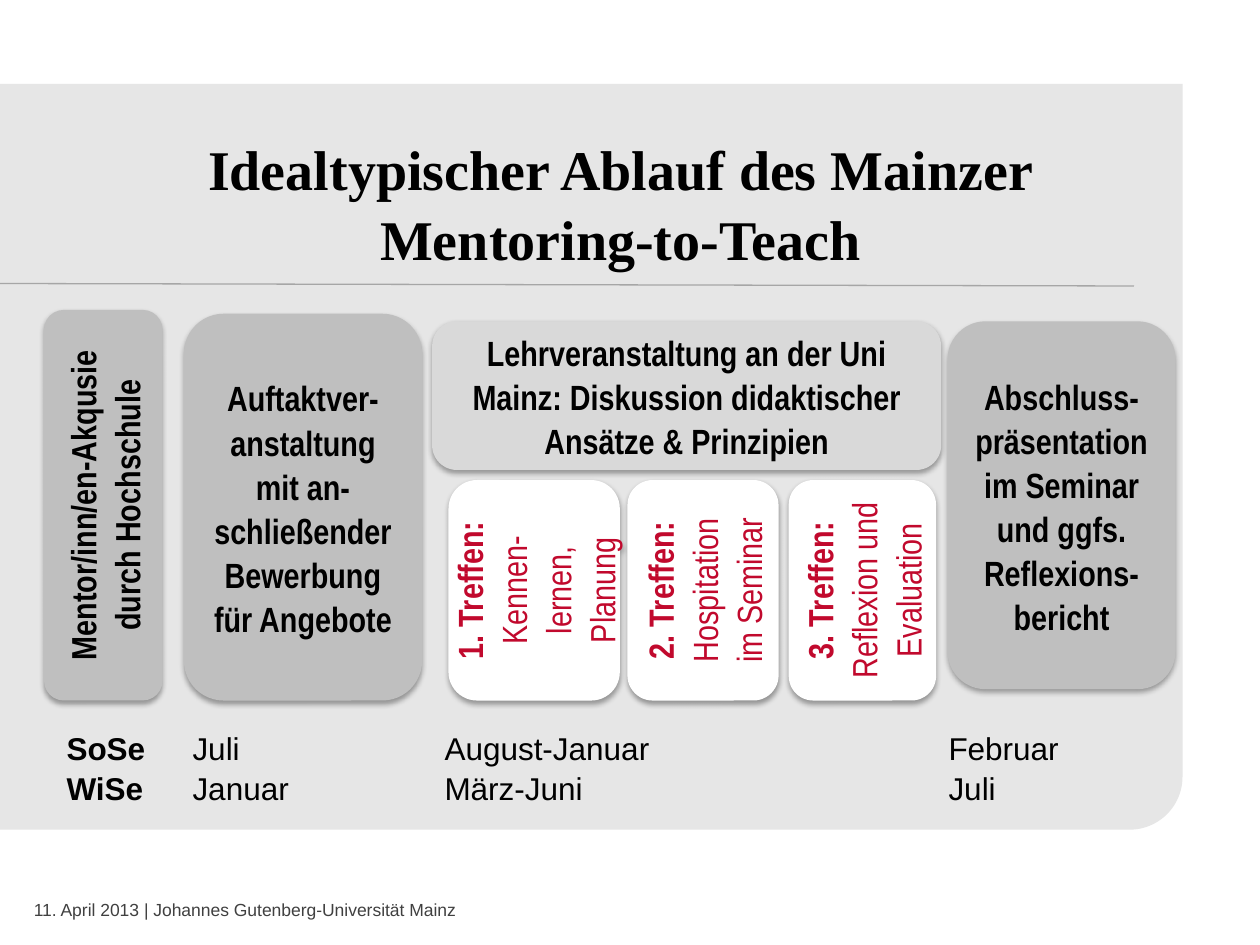
from lxml.etree import SubElement
from pptx import Presentation
from pptx.dml.color import RGBColor
from pptx.enum.shapes import MSO_CONNECTOR, MSO_SHAPE
from pptx.enum.text import MSO_ANCHOR, PP_ALIGN
from pptx.oxml.ns import qn
from pptx.util import Inches, Pt

TITLE = "Idealtypischer Ablauf des Mainzer Mentoring-to-Teach"
FOOTER = "11. April 2013 | Johannes Gutenberg-Universität Mainz"

BLACK, RED, WHITE = "000000", "C1092D", "FFFFFF"
PANEL, RULE, FOOT = "E6E6E6", "A6A6A6", "404040"
DARK, LIGHT = "BFBFBF", "D9D9D9"

# Columns: left, width. Rows: top, height. All in inches.
COLS = {"mentors": (0.35, 0.94), "kickoff": (1.46, 1.89), "course": (3.43, 4.04),
        "meet1": (3.56, 1.36), "meet2": (4.98, 1.2), "meet3": (6.26, 1.17),
        "final": (7.52, 1.81)}
ROWS = {"tall": (2.46, 3.1), "main": (2.49, 3.07), "end": (2.55, 2.92),
        "upper": (2.55, 1.18), "lower": (3.81, 1.75)}

# Column, row, fill, text colour, vertical, paragraphs of (text, bold) runs
CARDS = [
    ("final", "end", DARK, BLACK, False,
     [[("Abschluss-präsentation", True)],
      [("im Seminar und ggfs. Reflexions-bericht", True)]]),
    ("meet1", "lower", WHITE, RED, True,
     [[("1. Treffen:", True)], [("Kennen-lernen,", False)], [("Planung", False)]]),
    ("meet2", "lower", WHITE, RED, True,
     [[("2. Treffen: ", True), ("Hospitation im Seminar", False)]]),
    ("meet3", "lower", WHITE, RED, True,
     [[("3. Treffen:", True)], [("Reflexion und Evaluation", False)]]),
    ("kickoff", "main", DARK, BLACK, False,
     [[("Auftaktver-anstaltung mit an-schließender Bewerbung für Angebote", True)]]),
    ("course", "upper", LIGHT, BLACK, False,
     [[("Lehrveranstaltung an der Uni Mainz: Diskussion didaktischer "
        "Ansätze & Prinzipien", True)]]),
    ("mentors", "tall", DARK, BLACK, True,
     [[("Mentor/inn/en-Akqusie durch Hochschule", True)]]),
]

SCHEDULE = [("SoSe", "Juli", "August-Januar", "Februar"),
            ("WiSe", "Januar", "März-Juni", "Juli")]
TAB_STOPS = (1, 3, 7)


def rgb(color):
    return RGBColor.from_string(color)


def box(left, top, width, height):
    return [Inches(v) for v in (left, top, width, height)]


def write(tf, paragraphs, font, size, color, align=PP_ALIGN.LEFT, tabs=()):
    """Fill a text frame with paragraphs given as lists of (text, bold) runs."""
    tf.word_wrap = True
    for i, runs in enumerate(paragraphs):
        p = tf.add_paragraph() if i else tf.paragraphs[0]
        p.alignment = align
        p.line_spacing = 1.05
        p.space_before = Pt(0)
        if tabs:
            tab_list = SubElement(p._p.get_or_add_pPr(), qn("a:tabLst"))
            for stop in tabs:
                SubElement(tab_list, qn("a:tab"), pos=str(Inches(stop)), algn="l")
        for text, bold in runs:
            r = p.add_run()
            r.text = text
            r.font.name, r.font.size, r.font.bold = font, Pt(size), bold
            r.font.color.rgb = rgb(color)


def add_block(shapes, preset, place, fill):
    sp = shapes.add_shape(preset, *box(*place))
    sp.shadow.inherit = False
    sp.fill.solid()
    sp.fill.fore_color.rgb = rgb(fill)
    sp.line.fill.background()
    return sp


def add_soft_shadow(sp):
    effects = sp._element.spPr.find(qn("a:effectLst"))
    shadow = SubElement(effects, qn("a:outerShdw"), blurRad=str(Pt(3.1)),
                        dist=str(Pt(1.8)), dir="5400000", rotWithShape="0")
    color = SubElement(shadow, qn("a:srgbClr"), val=BLACK)
    SubElement(color, qn("a:alpha"), val="35000")


def add_card(shapes, col, row, fill, color, vertical, paragraphs):
    (left, width), (top, height) = COLS[col], ROWS[row]
    sp = add_block(shapes, MSO_SHAPE.ROUNDED_RECTANGLE, (left, top, width, height), fill)
    add_soft_shadow(sp)
    tf = sp.text_frame
    tf.vertical_anchor = MSO_ANCHOR.MIDDLE
    if vertical:
        tf._txBody.bodyPr.set("vert", "vert270")
    write(tf, paragraphs, "Arial Narrow", 20, color, PP_ALIGN.CENTER)


def add_text(shapes, place, *args, **kwargs):
    write(shapes.add_textbox(*box(*place)).text_frame, *args, **kwargs)


def main():
    prs = Presentation()
    prs.slide_width, prs.slide_height = Inches(10), Inches(7.5)
    shapes = prs.slides.add_slide(prs.slide_layouts[5]).shapes

    panel = add_block(shapes, MSO_SHAPE.ROUND_1_RECTANGLE, (1.73, -1.07, 5.92, 9.39), PANEL)
    panel.rotation = 90
    panel.adjustments[0] = 0.071

    add_text(shapes, (0.17, 7.08, 4.75, 0.33), [[(FOOTER, False)]], "Arial", 10, FOOT)

    rule = shapes.add_connector(MSO_CONNECTOR.STRAIGHT, *box(0, 2.25, 9, 2.27))
    rule.line.color.rgb = rgb(RULE)
    rule.line.width = Pt(0.75)
    SubElement(rule._element.spPr, qn("a:effectLst"))

    title = shapes.title
    title.left, title.top, title.width, title.height = box(0.85, 0.99, 8.15, 0.94)
    title.text_frame.vertical_anchor = MSO_ANCHOR.TOP
    write(title.text_frame, [[(TITLE, True)]], "Times New Roman", 32, BLACK, PP_ALIGN.CENTER)
    shapes._spTree.append(title._element)  # bring the title in front of the panel

    for card in CARDS:
        add_card(shapes, *card)

    rows = [[(term, True), ("\t" + "\t".join(months), False)] for term, *months in SCHEDULE]
    add_text(shapes, (0.43, 5.72, 8.66, 0.71), rows, "Arial", 18, BLACK, tabs=TAB_STOPS)

    prs.save("out.pptx")


if __name__ == "__main__":
    main()
